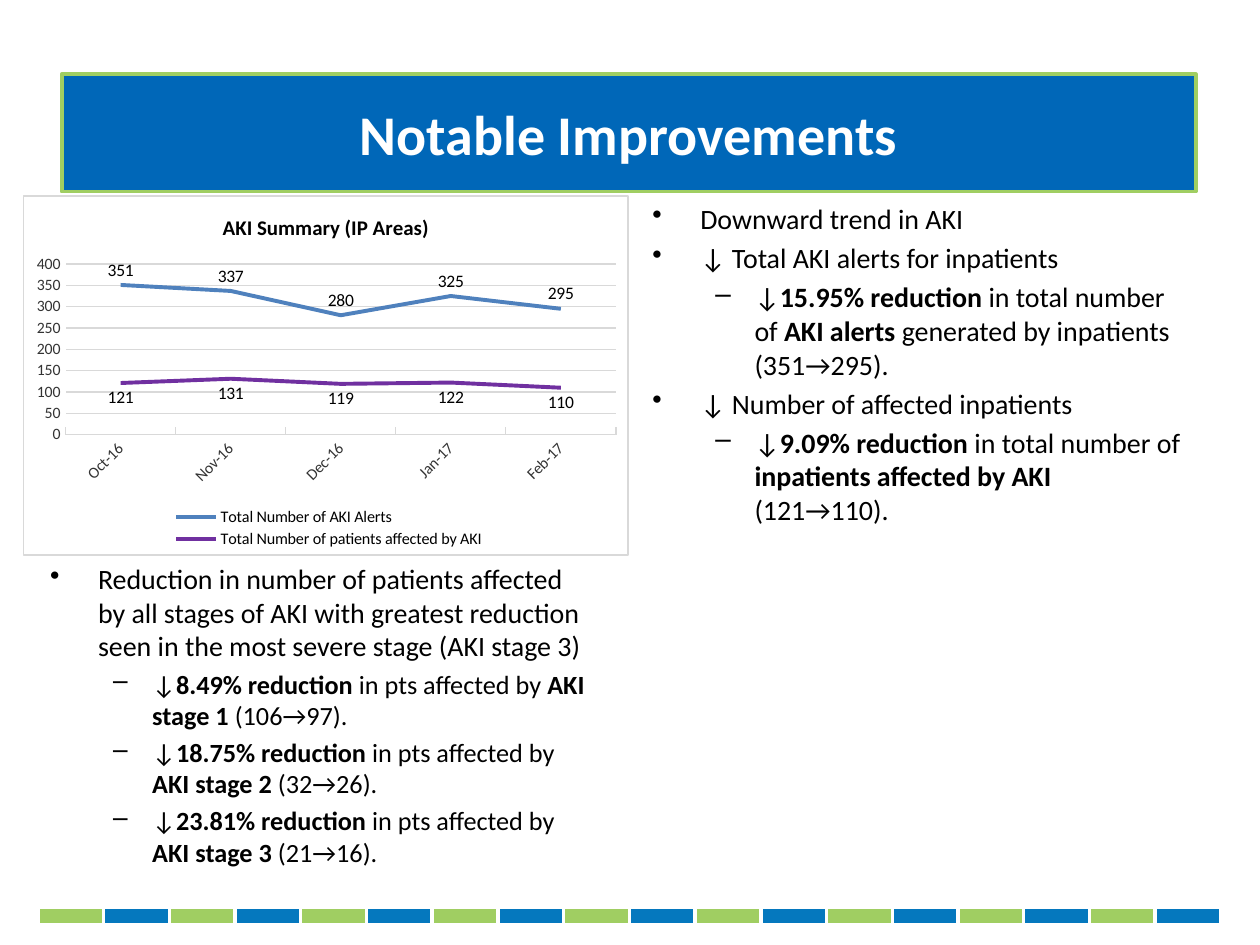
import pptx
import pptx.util
import pptx.dml.color
import pptx.chart.data
import pptx.enum.chart
import pptx.enum.text
import pptx.oxml
import pptx.oxml.ns
from lxml import etree

Inches, Pt = pptx.util.Inches, pptx.util.Pt
FONT = "Calibri"
GREEN, BLUE, TITLE_BLUE = "A0CE62", "0578BE", "0067B8"
BLACK, WHITE, GRAY, DARK = "000000", "FFFFFF", "D9D9D9", "333333"

MONTHS = ["Oct-16", "Nov-16", "Dec-16", "Jan-17", "Feb-17"]
SERIES = [  # name, values, colour, label position
    ("Total Number of AKI Alerts", (351, 337, 280, 325, 295), "4F81BD", "ABOVE"),
    ("Total Number of patients affected by AKI", (121, 131, 119, 122, 110), "7030A0", "BELOW"),
]

# Each paragraph: level, then runs that alternate between regular and bold
TREND = [
    (0, ["Downward trend in AKI"]),
    (0, ["↓ Total AKI alerts for inpatients"]),
    (1, ["↓", "15.95% reduction ", "in total number of ", "AKI alerts ",
         "generated by inpatients (351→295)."]),
    (0, ["↓ Number of affected inpatients"]),
    (1, ["↓", "9.09% reduction ", "in total number of ", "inpatients affected by AKI ",
         "(121→110)."]),
]
STAGES = [("8.49%", 1, "106→97"), ("18.75%", 2, "32→26"), ("23.81%", 3, "21→16")]
REDUCTION = [
    (0, ["Reduction in number of patients affected by all stages of AKI with greatest "
         "reduction seen in the most severe stage (AKI stage 3)"]),
] + [
    (1, ["↓", f"{percent} reduction ", "in pts affected by ", f"AKI stage {stage} ", f"({change})."])
    for percent, stage, change in STAGES
]


def color(value):
    return pptx.dml.color.RGBColor.from_string(value)


def set_font(font, size, value=BLACK, bold=False):
    font.name, font.size, font.bold = FONT, Pt(size), bold
    font.color.rgb = color(value)


def set_line(line, value, width):
    line.color.rgb = color(value)
    line.width = Pt(width)


def add_title(page, box, text):
    title = page.shapes.title
    title.left, title.top, title.width, title.height = map(Inches, box)
    title.fill.solid()
    title.fill.fore_color.rgb = color(TITLE_BLUE)
    set_line(title.line, GREEN, 2.25)
    frame = title.text_frame
    frame.auto_size = pptx.enum.text.MSO_AUTO_SIZE.NONE
    frame.vertical_anchor = pptx.enum.text.MSO_ANCHOR.MIDDLE
    para = frame.paragraphs[0]
    para.alignment = pptx.enum.text.PP_ALIGN.CENTER
    span = para.add_run()
    span.text = text
    set_font(span.font, 32, WHITE, True)


def add_stripe(page, box, count):
    frame = page.shapes.add_table(1, count, *map(Inches, box))
    table = frame.table
    table.first_row = table.horz_banding = False
    for index, cell in enumerate(table.rows[0].cells):
        table.columns[index].width = Inches(box[2] / count)
        cell.margin_left = cell.margin_right = cell.margin_top = cell.margin_bottom = 0
        cell.text_frame.paragraphs[0].font.size = Pt(1)
        # White borders go ahead of the fill
        properties = cell._tc.get_or_add_tcPr()
        for side in ("lnL", "lnR", "lnT", "lnB"):
            properties.append(pptx.oxml.parse_xml(
                f'<a:{side} {pptx.oxml.ns.nsdecls("a")} w="{Pt(2.25)}"><a:solidFill>'
                f'<a:srgbClr val="{WHITE}"/></a:solidFill></a:{side}>'))
        cell.fill.solid()
        cell.fill.fore_color.rgb = color(BLUE if index % 2 else GREEN)


def set_layout(parent, x, y, width, height, inner=False):
    """Fix a chart part at fractions of the chart area."""
    for old in parent.findall(pptx.oxml.ns.qn("c:layout")):
        parent.remove(old)
    target = '<c:layoutTarget val="inner"/>' if inner else ""
    layout = pptx.oxml.parse_xml(
        f'<c:layout {pptx.oxml.ns.nsdecls("c")}><c:manualLayout>{target}'
        f'<c:xMode val="edge"/><c:yMode val="edge"/><c:x val="{x}"/><c:y val="{y}"/>'
        f'<c:w val="{width}"/><c:h val="{height}"/></c:manualLayout></c:layout>')
    if inner:
        parent.insert(0, layout)
    else:
        parent.find(pptx.oxml.ns.qn("c:legendPos")).addnext(layout)


def add_summary_chart(page, box):
    kinds = pptx.enum.chart
    data = pptx.chart.data.CategoryChartData()
    data.categories = MONTHS
    for name, values, _, _ in SERIES:
        data.add_series(name, values)
    chart = page.shapes.add_chart(kinds.XL_CHART_TYPE.LINE, *map(Inches, box), data).chart
    set_font(chart.font, 10)

    # Title and legend
    chart.has_title = True
    span = chart.chart_title.text_frame.paragraphs[0].add_run()
    span.text = "AKI Summary (IP Areas)"
    set_font(span.font, 12, bold=True)
    chart.has_legend = True
    chart.legend.position = kinds.XL_LEGEND_POSITION.BOTTOM
    chart.legend.include_in_layout = False
    set_font(chart.legend.font, 9.2)
    set_layout(chart.legend._element, 0.24, 0.86, 0.53, 0.13)
    set_layout(chart._chartSpace.chart.plotArea, 0.07, 0.19, 0.91, 0.475, inner=True)

    # Axes
    months, counts = chart.category_axis, chart.value_axis
    for axis in (months, counts):
        set_font(axis.tick_labels.font, 9, DARK)
    months.major_tick_mark = kinds.XL_TICK_MARK.INSIDE
    set_line(months.format.line, GRAY, 0.75)
    months._element.txPr.bodyPr.set("rot", "-2700000")
    counts.minimum_scale, counts.maximum_scale, counts.major_unit = 0, 400, 50
    counts.major_tick_mark = kinds.XL_TICK_MARK.NONE
    counts.format.line.fill.background()
    set_line(counts.major_gridlines.format.line, GRAY, 0.75)

    # Lines with value labels
    for series, (_, _, value, side) in zip(chart.plots[0].series, SERIES):
        series.smooth = False
        series.marker.style = kinds.XL_MARKER_STYLE.NONE
        set_line(series.format.line, value, 2.25)
        labels = series.data_labels
        labels.show_value = True
        labels.position = kinds.XL_LABEL_POSITION[side]
        set_font(labels.font, 10)

    # Chart area fill and border
    chart._chartSpace.chart.addnext(pptx.oxml.parse_xml(
        f'<c:spPr {pptx.oxml.ns.nsdecls("c", "a")}>'
        f'<a:solidFill><a:srgbClr val="{WHITE}"/></a:solidFill><a:ln w="{Pt(0.75)}">'
        f'<a:solidFill><a:srgbClr val="{GRAY}"/></a:solidFill></a:ln></c:spPr>'))


def add_bullets(page, box, paragraphs, sizes):
    frame = page.shapes.add_textbox(*map(Inches, box)).text_frame
    frame.word_wrap = True
    for index, (level, runs) in enumerate(paragraphs):
        para = frame.add_paragraph() if index else frame.paragraphs[0]
        para.level = level
        para.space_before = Pt(0.2 * sizes[level])
        margin, hang, mark = ((0.38, 0.38, "•"), (0.81, 0.31, "–"))[level]
        properties = para._p.get_or_add_pPr()
        properties.set("marL", str(Inches(margin)))
        properties.set("indent", str(-Inches(hang)))
        bullet = etree.SubElement(properties, pptx.oxml.ns.qn("a:buChar"))
        bullet.set("char", mark)
        for position, text in enumerate(runs):
            span = para.add_run()
            span.text = text
            set_font(span.font, sizes[level], bold=position % 2 == 1)


def main():
    deck = pptx.Presentation()
    deck.slide_width, deck.slide_height = Inches(10), Inches(7.5)
    page = deck.slides.add_slide(deck.slide_layouts[5])
    add_stripe(page, (0.3, 7.2, 9.39, 0.14), 18)
    add_title(page, (0.49, 0.59, 9, 0.93), "Notable Improvements")
    add_summary_chart(page, (0.18, 1.55, 4.81, 2.86))
    add_bullets(page, (5.08, 1.55, 4.42, 5.15), TREND, (16, 16))
    add_bullets(page, (0.3, 4.41, 4.51, 2.78), REDUCTION, (16, 15))
    deck.save("out.pptx")


if __name__ == "__main__":
    main()
